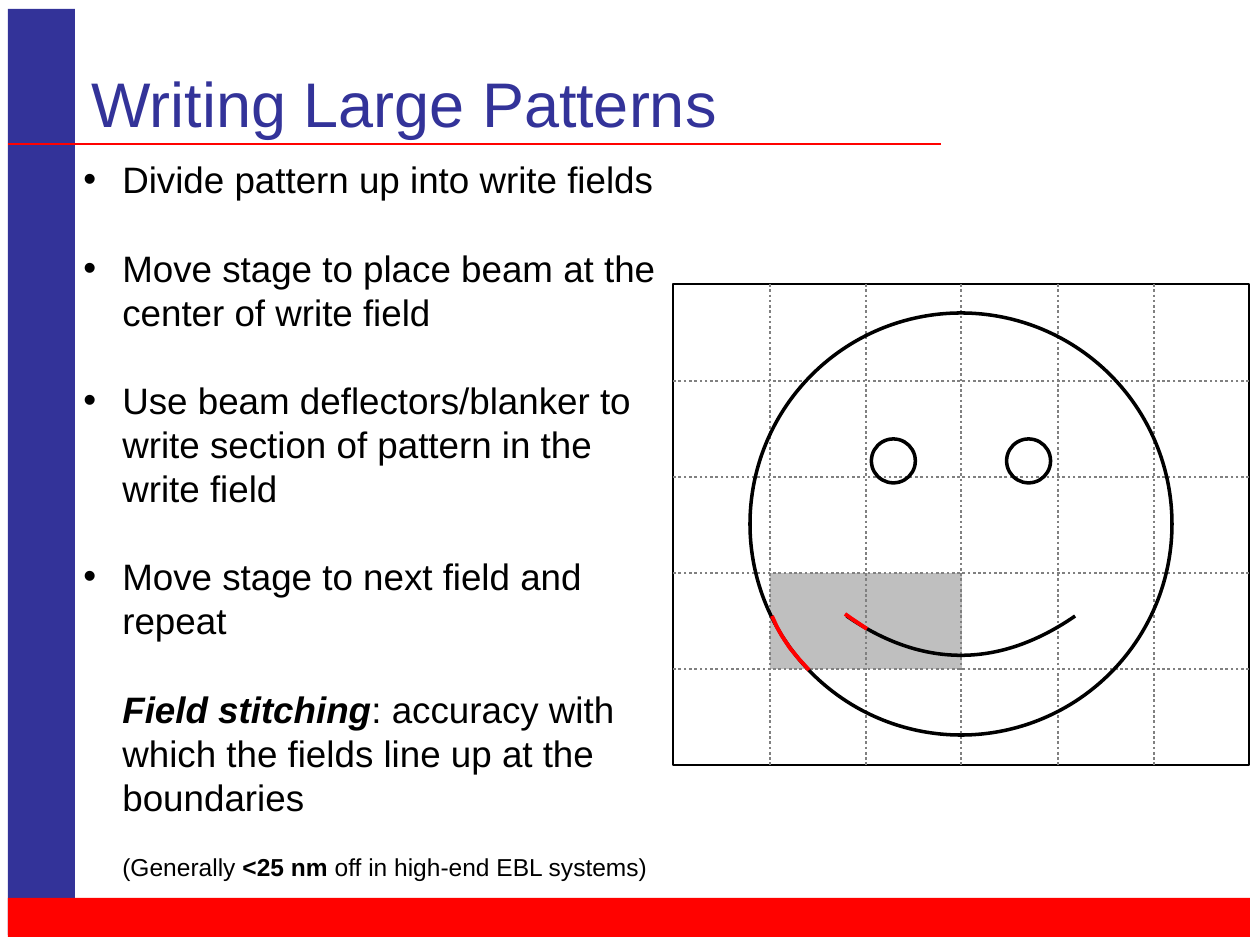
from dataclasses import dataclass

from lxml import etree
from pptx import Presentation
from pptx.dml.color import RGBColor
from pptx.enum.dml import MSO_LINE
from pptx.enum.shapes import MSO_CONNECTOR, MSO_SHAPE
from pptx.enum.text import MSO_ANCHOR
from pptx.oxml.ns import qn
from pptx.util import Emu, Pt

EMU_PER_PX = 914400 / 126
RECTANGLE = MSO_SHAPE.RECTANGLE
SMILEY = MSO_SHAPE.SMILEY_FACE
STRAIGHT = MSO_CONNECTOR.STRAIGHT
DOTTED = MSO_LINE.ROUND_DOT
BOTTOM = MSO_ANCHOR.BOTTOM
TOP = MSO_ANCHOR.TOP

FONT = "Arial"
BLACK = "000000"
BLUE = "333399"
RED = "FF0200"
BRIGHT_RED = "FF0000"
FIELD_GRAY = "BFBFBF"
GRID_GRAY = "808080"
TEXT_INDENT = 39


@dataclass
class Box:
    left: int
    top: int
    width: int
    height: int


@dataclass
class TextRun:
    text: str
    bold: bool = False
    italic: bool = False


@dataclass
class TextParagraph:
    runs: list[TextRun]
    size: float = 21
    color: str = BLACK
    line_height: float = 25.2
    space_before: float = 25.2
    bullet: bool = False
    indented: bool = True


def px(value: float) -> Emu:
    return Emu(round(value * EMU_PER_PX))


def rgb(color: str) -> RGBColor:
    return RGBColor.from_string(color)


def style_line(line, color: str, width: float) -> None:
    line.color.rgb = rgb(color)
    line.width = Pt(width)


def add_shape(slide, kind, box: Box, fill: str = "", line: str = "", width: float = 1):
    shape = slide.shapes.add_shape(
        kind, px(box.left), px(box.top), px(box.width), px(box.height))
    shape.shadow.inherit = False
    if fill:
        shape.fill.solid()
        shape.fill.fore_color.rgb = rgb(fill)
    else:
        shape.fill.background()
    if line:
        style_line(shape.line, line, width)
    else:
        shape.line.fill.background()
    return shape


def add_line(slide, start: tuple[int, int], end: tuple[int, int], color: str, width: float):
    connector = slide.shapes.add_connector(
        STRAIGHT, px(start[0]), px(start[1]), px(end[0]), px(end[1]))
    style_line(connector.line, color, width)
    etree.SubElement(connector._element.spPr, qn("a:effectLst"))
    return connector


def add_stroke(slide, points: list[tuple[int, int]]) -> None:
    builder = slide.shapes.build_freeform(*points[0], scale=EMU_PER_PX)
    builder.add_line_segments(points[1:], close=False)
    stroke = builder.convert_to_shape()
    stroke.shadow.inherit = False
    stroke.fill.background()
    style_line(stroke.line, BRIGHT_RED, 2.25)


def add_text(slide, box: Box, paragraphs: list[TextParagraph], anchor) -> None:
    text_box = slide.shapes.add_textbox(
        px(box.left), px(box.top), px(box.width), px(box.height))
    frame = text_box.text_frame
    frame.word_wrap = True
    frame.vertical_anchor = anchor
    for index, content in enumerate(paragraphs):
        paragraph = frame.add_paragraph() if index else frame.paragraphs[0]
        properties = paragraph._p.get_or_add_pPr()
        if content.indented:
            properties.set("marL", str(px(TEXT_INDENT)))
        if content.bullet:
            properties.set("indent", str(px(-TEXT_INDENT)))
            etree.SubElement(properties, qn("a:buFont"), typeface=FONT)
            etree.SubElement(properties, qn("a:buChar"), char="•")
        if index:
            paragraph.space_before = Pt(content.space_before)
        paragraph.line_spacing = Pt(content.line_height)
        for text_run in content.runs:
            run = paragraph.add_run()
            run.text = text_run.text
            run.font.name = FONT
            run.font.size = Pt(content.size)
            run.font.bold = text_run.bold
            run.font.italic = text_run.italic
            run.font.color.rgb = rgb(content.color)


def add_write_fields(slide) -> None:
    frame_box = Box(673, 284, 576, 481)
    right = frame_box.left + frame_box.width
    bottom = frame_box.top + frame_box.height
    columns, rows, pitch = 6, 5, 96
    grid_left, grid_top = 674, 285
    for column in (2, 1):
        add_shape(slide, RECTANGLE,
                  Box(grid_left + column * pitch, grid_top + 3 * pitch, pitch, pitch),
                  fill=FIELD_GRAY)
    frame = add_shape(slide, RECTANGLE, frame_box, line=BLACK, width=1.5)
    for column in range(1, columns):
        x = grid_left + column * pitch
        divider = add_line(slide, (x, frame_box.top), (x, bottom), GRID_GRAY, 1.5)
        divider.line.dash_style = DOTTED
        if column * 2 == columns:
            divider.begin_connect(frame, 0)
            divider.end_connect(frame, 2)
    for row in range(1, rows):
        y = grid_top + row * pitch
        divider = add_line(slide, (right, y), (frame_box.left, y), GRID_GRAY, 1.5)
        divider.line.dash_style = DOTTED
    add_shape(slide, SMILEY, Box(750, 313, 422, 422), line=BLACK, width=2)


def main() -> None:
    presentation = Presentation()
    presentation.slide_width = px(1260)
    presentation.slide_height = px(945)
    slide = presentation.slides.add_slide(presentation.slide_layouts[6])

    add_shape(slide, RECTANGLE, Box(8, 9, 67, 926), fill=BLUE)
    add_shape(slide, RECTANGLE, Box(8, 898, 1242, 39), fill=RED)
    add_line(slide, (8, 144), (941, 144), RED, 1)

    title = TextParagraph([TextRun("Writing Large Patterns")], size=36, color=BLUE,
                          line_height=41.4, indented=False)
    add_text(slide, Box(79, 57, 1109, 89), [title], BOTTOM)
    add_write_fields(slide)

    steps = [
        "Divide pattern up into write fields",
        "Move stage to place beam at the center of write field",
        "Use beam deflectors/blanker to write section of pattern in the write field",
        "Move stage to next field and repeat",
    ]
    body = [TextParagraph([TextRun(step)], bullet=True) for step in steps]
    body.append(TextParagraph([
        TextRun("Field stitching", bold=True, italic=True),
        TextRun(": accuracy with which the fields line up at the boundaries"),
    ]))
    body.append(TextParagraph([
        TextRun("(Generally "),
        TextRun("<25 nm ", bold=True),
        TextRun("off in high-end EBL systems)"),
    ], size=14, line_height=16.8, space_before=19.3))
    add_text(slide, Box(71, 151, 602, 745), body, TOP)

    add_stroke(slide, [(772, 616), (777, 627), (782, 636), (790, 648), (799, 659), (809, 670)])
    add_stroke(slide, [(845, 614), (852, 619), (861, 625), (867, 629)])
    presentation.save("out.pptx")


if __name__ == "__main__":
    main()
